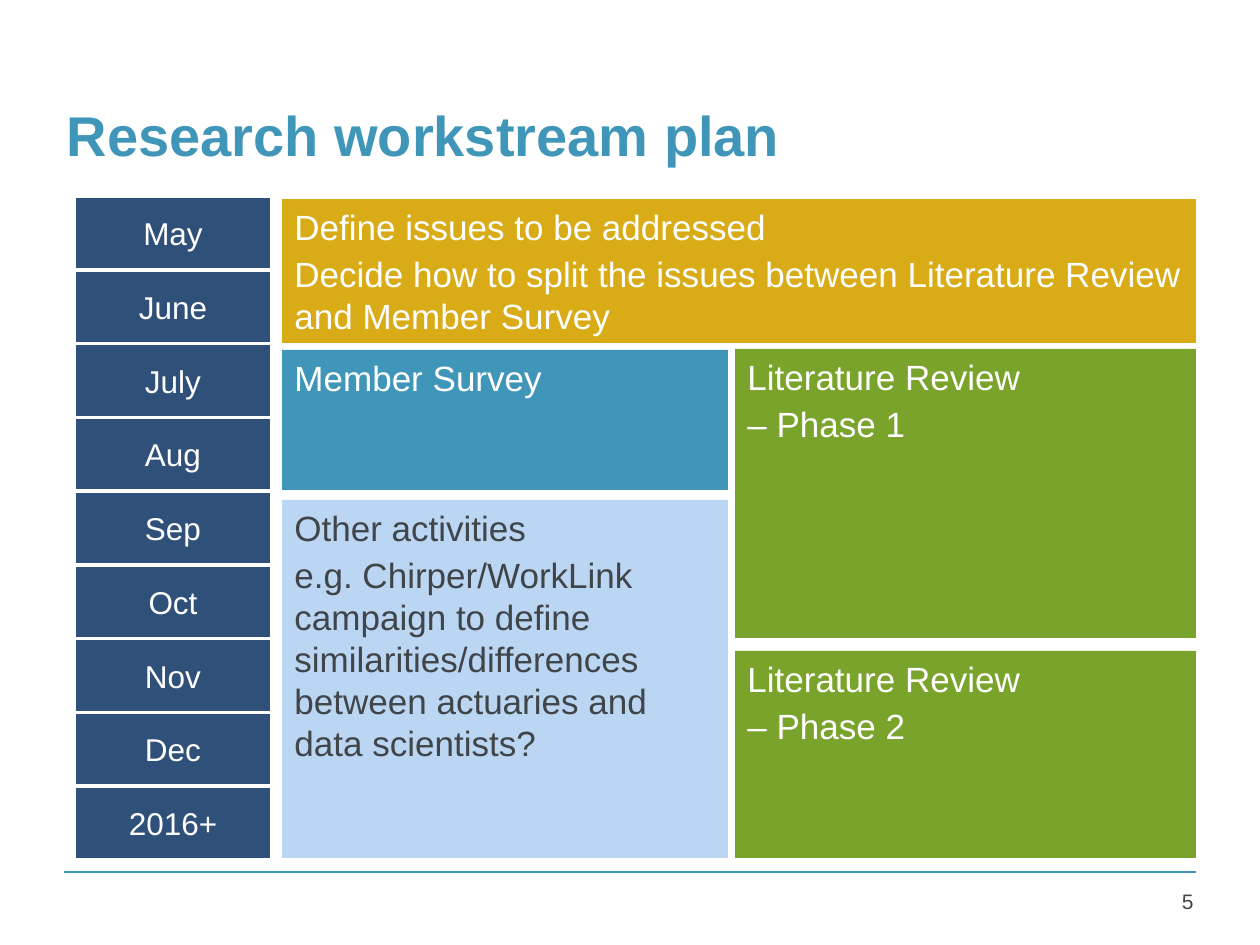
import pptx
import pptx.dml.color
import pptx.enum.shapes
import pptx.enum.text
import pptx.oxml
import pptx.oxml.ns
import pptx.util

ALIGN = pptx.enum.text.PP_ALIGN
ANCHOR = pptx.enum.text.MSO_ANCHOR
PX_PER_INCH = 126

WHITE, INK = "FFFFFF", "3F4548"
TEAL, NAVY, GOLD, GREEN, PALE_BLUE = "4096B8", "2F5079", "D9AB16", "79A32A", "BBD6F2"

MONTHS = ["May", "June", "July", "Aug", "Sep", "Oct", "Nov", "Dec", "2016+"]
MONTHS_BOX = (74, 196, 198, 664)
ACTIVITIES_BOX = (282, 199, 914, 659)

# Box within the activities area, fill, text colour, paragraphs
ACTIVITIES = [
    ((0, 0, 914, 144), GOLD, WHITE,
     ["Define issues to be addressed",
      "Decide how to split the issues between Literature Review and Member Survey"]),
    ((453, 150, 461, 289), GREEN, WHITE, ["Literature Review", "– Phase 1"]),
    ((0, 151, 446, 140), TEAL, WHITE, ["Member Survey"]),
    ((453, 452, 461, 207), GREEN, WHITE, ["Literature Review", "– Phase 2"]),
    ((0, 301, 446, 358), PALE_BLUE, INK,
     ["Other activities",
      "e.g. Chirper/WorkLink campaign to define similarities/differences "
      "between actuaries and data scientists?"]),
]


def px(length):
    return pptx.util.Emu(round(length * 914400 / PX_PER_INCH))


def rgb(hex_string):
    return pptx.dml.color.RGBColor.from_string(hex_string)


def write(frame, paragraphs, color, size, align=ALIGN.LEFT, anchor=ANCHOR.TOP,
          bold=False, space_before=0):
    frame.word_wrap = True
    frame.vertical_anchor = anchor
    frame.text = "\n".join(paragraphs)
    font_format = {"name": "Arial", "size": pptx.util.Pt(size), "bold": bold}
    for paragraph in frame.paragraphs:
        paragraph.alignment = align
        paragraph.space_before = pptx.util.Pt(space_before)
        font = paragraph.runs[0].font
        font.color.rgb = rgb(color)
        for attribute, value in font_format.items():
            setattr(font, attribute, value)


def add_block(shapes, box, fill, outline=None):
    """Add a flat rectangle, with a 2 pt outline if a colour is given."""
    block = shapes.add_shape(pptx.enum.shapes.MSO_SHAPE.RECTANGLE, *map(px, box))
    block.shadow.inherit = False
    block.fill.solid()
    block.fill.fore_color.rgb = rgb(fill)
    if outline:
        block.line.color.rgb = rgb(outline)
        block.line.width = pptx.util.Pt(2)
    else:
        block.line.fill.background()
    return block


def place_title(slide, box):
    title = slide.shapes.title
    for attribute, length in zip(("left", "top", "width", "height"), box):
        setattr(title, attribute, px(length))
    write(title.text_frame, ["Research workstream plan"], TEAL, 32,
          anchor=ANCHOR.MIDDLE, bold=True)


def add_months(slide, box):
    left, top, width, height = box
    step = height / len(MONTHS)
    timeline = slide.shapes.add_group_shape()
    for row, month in enumerate(MONTHS):
        block = add_block(timeline.shapes, (left, top + row * step, width, step), NAVY, WHITE)
        write(block.text_frame, [month], WHITE, 18, ALIGN.CENTER, ANCHOR.MIDDLE)


def add_activities(slide, box):
    left, top = box[:2]
    for (x, y, width, height), fill, color, paragraphs in ACTIVITIES:
        block = add_block(slide.shapes, (left + x, top + y, width, height), fill)
        write(block.text_frame, paragraphs, color, 20, space_before=3)


def add_footer(slide, box):
    left, top, width, height = box
    rule = slide.shapes.add_connector(
        pptx.enum.shapes.MSO_CONNECTOR.STRAIGHT,
        px(left), px(top), px(left + width), px(top))
    rule.line.color.rgb = rgb(TEAL)
    rule.line.width = pptx.util.Pt(1)
    rule._element.spPr.append(
        pptx.oxml.parse_xml(f"<a:effectLst {pptx.oxml.ns.nsdecls('a')}/>"))
    number_width, drop = 90, 10
    page_number = slide.shapes.add_textbox(
        px(left + width + drop - number_width), px(top + drop),
        px(number_width), px(height - drop))
    write(page_number.text_frame, ["5"], INK, 12, ALIGN.RIGHT)


def main():
    deck = pptx.Presentation()
    deck.slide_width, deck.slide_height = px(1260), px(945)
    slide = deck.slides.add_slide(deck.slide_layouts.get_by_name("Title Only"))
    add_footer(slide, (64, 872, 1132, 57))
    place_title(slide, (54, 55, 1143, 158))
    add_months(slide, MONTHS_BOX)
    add_activities(slide, ACTIVITIES_BOX)
    deck.save("out.pptx")


if __name__ == "__main__":
    main()
